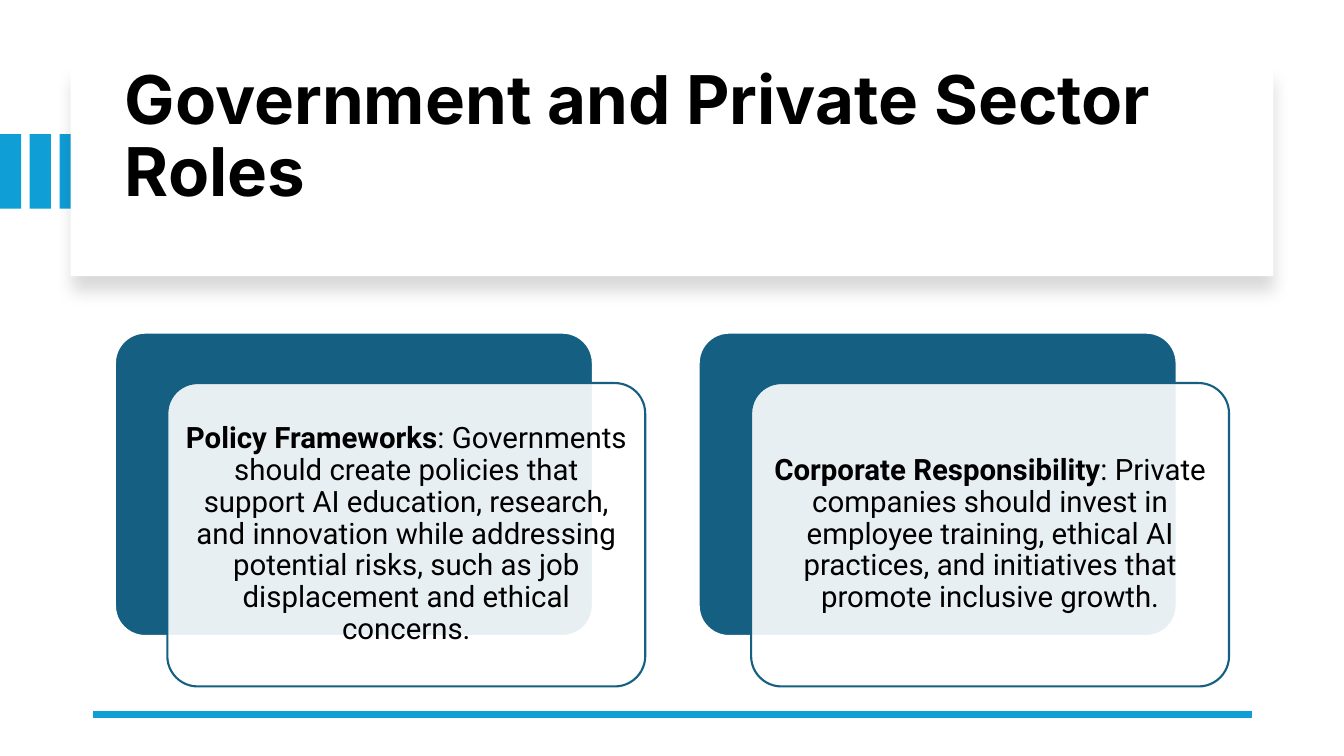
from dataclasses import dataclass

from lxml import etree
from pptx import Presentation
from pptx.dml.color import RGBColor
from pptx.enum import shapes, text
from pptx.oxml import ns
from pptx.util import Inches, Pt


@dataclass(frozen=True)
class Theme:
    """Colours, fonts and type sizes of the slide."""
    accent: RGBColor = RGBColor(0x0F, 0x9E, 0xD5)
    card: RGBColor = RGBColor(0x15, 0x60, 0x82)
    paper: RGBColor = RGBColor(0xFF, 0xFF, 0xFF)
    ink: RGBColor = RGBColor(0, 0, 0)
    heading_font: str = "Inter"
    body_font: str = "Roboto"
    heading_size: int = 48
    body_size: int = 21


THEME = Theme()
ROLES = [
    ("Policy Frameworks",
     ": Governments should create policies that support AI education, research, "
     "and innovation while addressing potential risks, such as job displacement "
     "and ethical concerns."),
    ("Corporate Responsibility",
     ": Private companies should invest in employee training, ethical AI "
     "practices, and initiatives that promote inclusive growth."),
]


def add_block(parent, kind, box, fill, line=None):
    """Add a filled preset shape without a shadow."""
    block = parent.shapes.add_shape(kind, *map(Inches, box))
    block.shadow.inherit = False
    block.fill.solid()
    block.fill.fore_color.rgb = fill
    if line is None:
        block.line.fill.background()
    else:
        block.line.color.rgb = line
        block.line.width = Pt(1.5)
    return block


def add_copy(parent, box, runs, font, size, align, inset):
    """Add one wrapped, vertically centred paragraph from (wording, bold) runs."""
    frame = parent.shapes.add_textbox(*map(Inches, box)).text_frame
    frame.word_wrap = True
    frame.vertical_anchor = text.MSO_ANCHOR.MIDDLE
    (frame.margin_left, frame.margin_top,
     frame.margin_right, frame.margin_bottom) = map(Inches, inset)
    paragraph = frame.paragraphs[0]
    paragraph.alignment = align
    paragraph.line_spacing = 0.9
    for wording, bold in runs:
        run = paragraph.add_run()
        run.text = wording
        run.font.name = font
        run.font.size = Pt(size)
        run.font.bold = bold
        run.font.color.rgb = THEME.ink
    return paragraph


def add_soft_shadow(banner):
    """Give the banner a blurred shadow that falls straight down."""
    effects = banner._element.spPr.find(ns.qn("a:effectLst"))
    shadow = etree.SubElement(
        effects, ns.qn("a:outerShdw"), blurRad=str(Pt(11)), dist=str(Pt(10)),
        dir="5400000", algn="t", rotWithShape="0")
    colour = etree.SubElement(shadow, ns.qn("a:srgbClr"), val=str(THEME.ink))
    etree.SubElement(colour, ns.qn("a:alpha"), val="15000")


def add_header(slide, box):
    """Place the accent stripes, the raised banner and the title."""
    left, top, width, height = box
    stripes = slide.shapes.add_group_shape()
    for index in range(3):
        add_block(stripes, shapes.MSO_SHAPE.RECTANGLE,
                  (0.295 * index, top + 0.66, 0.21, 0.74), THEME.accent)
    banner = add_block(slide, shapes.MSO_SHAPE.RECTANGLE, box, THEME.paper)
    add_soft_shadow(banner)
    add_copy(slide, (left + 0.44, top + 0.22, width - 0.8, height - 0.37),
             [("Government and Private Sector Roles", True)],
             THEME.heading_font, THEME.heading_size, text.PP_ALIGN.LEFT,
             (0.1, 0.05, 0.1, 0.78))


def add_role(slide, box, name, description):
    """Place a dark card with an offset translucent panel and its text."""
    left, top, width, height = box
    role = slide.shapes.add_group_shape()
    back = add_block(role, shapes.MSO_SHAPE.ROUNDED_RECTANGLE, box,
                     THEME.card, THEME.paper)
    panel = add_block(role, shapes.MSO_SHAPE.ROUNDED_RECTANGLE,
                      (left + 0.52, top + 0.5, width, height),
                      THEME.paper, THEME.card)
    for card in (back, panel):
        card.adjustments[0] = 0.1
    colour = panel._element.spPr.find(ns.qn("a:solidFill"))[0]
    etree.SubElement(colour, ns.qn("a:alpha"), val="90000")
    paragraph = add_copy(
        role, (left + 0.61, top + 0.59, width - 0.18, height - 0.18),
        [(name, True), (description, False)],
        THEME.body_font, THEME.body_size, text.PP_ALIGN.CENTER, (0.09,) * 4)
    paragraph.space_after = Pt(THEME.body_size * 0.35)


def add_footer_rule(slide, left, right, y):
    """Draw the accent rule along the bottom."""
    rule = slide.shapes.add_connector(
        shapes.MSO_CONNECTOR.STRAIGHT, *map(Inches, (right, y, left, y)))
    rule.line.color.rgb = THEME.accent
    rule.line.width = Pt(4.5)
    etree.SubElement(rule._element.spPr, ns.qn("a:effectLst"))


def main():
    """Build the slide and save it."""
    deck = Presentation()
    deck.slide_width, deck.slide_height = Inches(13.33), Inches(7.5)
    slide = deck.slides.add_slide(deck.slide_layouts[6])
    slide.background.fill.solid()
    slide.background.fill.fore_color.rgb = THEME.paper
    add_header(slide, (0.7, 0.67, 11.93, 2.07))
    add_footer_rule(slide, 0.92, 12.42, 7.09)
    for index, (name, description) in enumerate(ROLES):
        add_role(slide, (1.14 + 5.79 * index, 3.3, 4.74, 3.01), name, description)
    deck.save("out.pptx")


if __name__ == "__main__":
    main()
